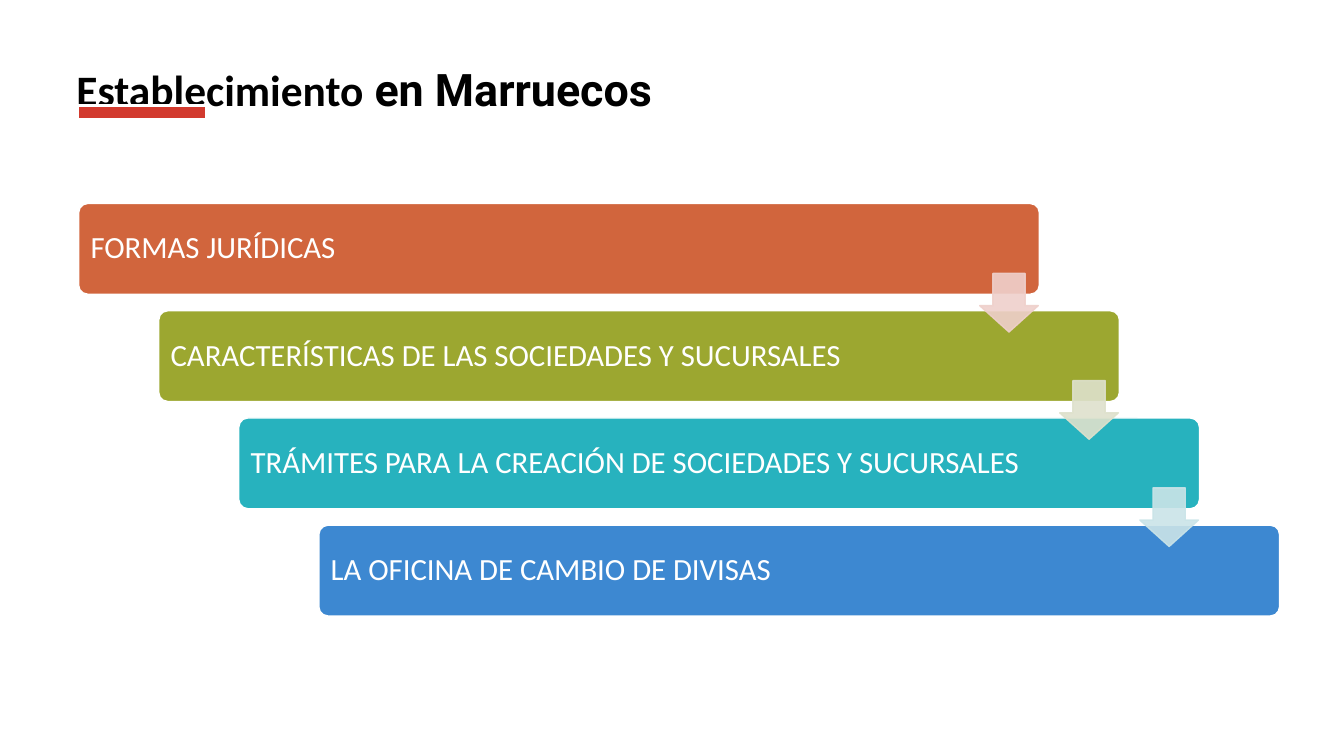
import pptx
import pptx.util
import pptx.dml.color
import pptx.enum.shapes
import pptx.enum.text
import pptx.oxml
import pptx.oxml.ns

Pt = pptx.util.Pt
RGBColor = pptx.dml.color.RGBColor
MSO_SHAPE = pptx.enum.shapes.MSO_SHAPE

BLACK = RGBColor(0x00, 0x00, 0x00)
WHITE = RGBColor(0xFF, 0xFF, 0xFF)
RED = RGBColor(0xD2, 0x3A, 0x2E)
ORANGE = RGBColor(0xD1, 0x65, 0x3D)
OLIVE = RGBColor(0x9C, 0xA7, 0x30)
TEAL = RGBColor(0x27, 0xB2, 0xBE)
BLUE = RGBColor(0x3D, 0x88, 0xD1)
PALE_PINK = RGBColor(0xEF, 0xD0, 0xCB)
PALE_OLIVE = RGBColor(0xDE, 0xE1, 0xCC)
PALE_TEAL = RGBColor(0xCA, 0xE4, 0xE8)

STEPS = [
    ("FORMAS JURÍDICAS", ORANGE),
    ("CARACTERÍSTICAS DE LAS SOCIEDADES Y SUCURSALES", OLIVE),
    ("TRÁMITES PARA LA CREACIÓN DE SOCIEDADES Y SUCURSALES", TEAL),
    ("LA OFICINA DE CAMBIO DE DIVISAS", BLUE),
]
ARROWS = [PALE_PINK, PALE_OLIVE, PALE_TEAL]

# Each step moves right and down by the same amount
STEP_X, STEP_Y = 57.2, 76.6
BAR_X, BAR_Y, BAR_W, BAR_H = 56.2, 145.4, 686.2, 64.8
ARROW_X, ARROW_Y, ARROW_SIZE = 699.8, 195.3, 41.9


def add_shape(slide, kind, x, y, w, h, fill, line, line_width):
    sp = slide.shapes.add_shape(kind, Pt(x), Pt(y), Pt(w), Pt(h))
    sp.shadow.inherit = False
    sp.fill.solid()
    sp.fill.fore_color.rgb = fill
    sp.line.color.rgb = line
    sp.line.width = Pt(line_width)
    return sp


def add_title(slide):
    sp = slide.shapes.add_textbox(Pt(47.5), Pt(44.6), Pt(857.5), Pt(86.4))
    tf = sp.text_frame
    tf.word_wrap = True
    p = tf.paragraphs[0]
    p.line_spacing = 0.9
    p.font.bold = True
    p.font.color.rgb = BLACK
    for text, font, size in [("Establecimiento", "Calibri", 31),
                             (" en Marruecos", "Roboto", 32)]:
        r = p.add_run()
        r.text = text
        r.font.name = font
        r.font.size = Pt(size)
        r.font.bold = True
        r.font.color.rgb = BLACK


def add_bar(slide, i, text, color):
    sp = add_shape(slide, MSO_SHAPE.ROUNDED_RECTANGLE, BAR_X + i * STEP_X,
                   BAR_Y + i * STEP_Y, BAR_W, BAR_H, color, WHITE, 1)
    sp.adjustments[0] = 0.1
    tf = sp.text_frame
    tf.word_wrap = True
    tf.vertical_anchor = pptx.enum.text.MSO_ANCHOR.MIDDLE
    tf.margin_left = tf.margin_right = Pt(6.6)
    tf.margin_top = tf.margin_bottom = Pt(6.6)
    p = tf.paragraphs[0]
    p.text = text
    p.alignment = pptx.enum.text.PP_ALIGN.LEFT
    p.line_spacing = 0.9
    p.font.name = "Calibri"
    p.font.size = Pt(22)
    p.font.color.rgb = WHITE


def add_arrow(slide, i, color):
    sp = add_shape(slide, MSO_SHAPE.DOWN_ARROW, ARROW_X + i * STEP_X,
                   ARROW_Y + i * STEP_Y, ARROW_SIZE, ARROW_SIZE,
                   color, color, 1)
    sp.adjustments[0] = 0.55
    sp.adjustments[1] = 0.45
    # Fill and outline are 90 % opaque
    qn = pptx.oxml.ns.qn
    for clr in sp.element.spPr.iter(qn("a:srgbClr")):
        clr.append(pptx.oxml.parse_xml(
            '<a:alpha %s val="90000"/>' % pptx.oxml.ns.nsdecls("a")))


def main():
    prs = pptx.Presentation()
    prs.slide_width = Pt(960)
    prs.slide_height = Pt(540)
    slide = prs.slides.add_slide(prs.slide_layouts[6])

    # Title
    add_title(slide)

    # Staircase of topics
    for i, (text, color) in enumerate(STEPS):
        add_bar(slide, i, text, color)
    for i, color in enumerate(ARROWS):
        add_arrow(slide, i, color)

    # Accent under the title
    add_shape(slide, MSO_SHAPE.RECTANGLE, 55.4, 75.6, 92.2, 9.4,
              RED, WHITE, 2)

    prs.save("out.pptx")


if __name__ == "__main__":
    main()
